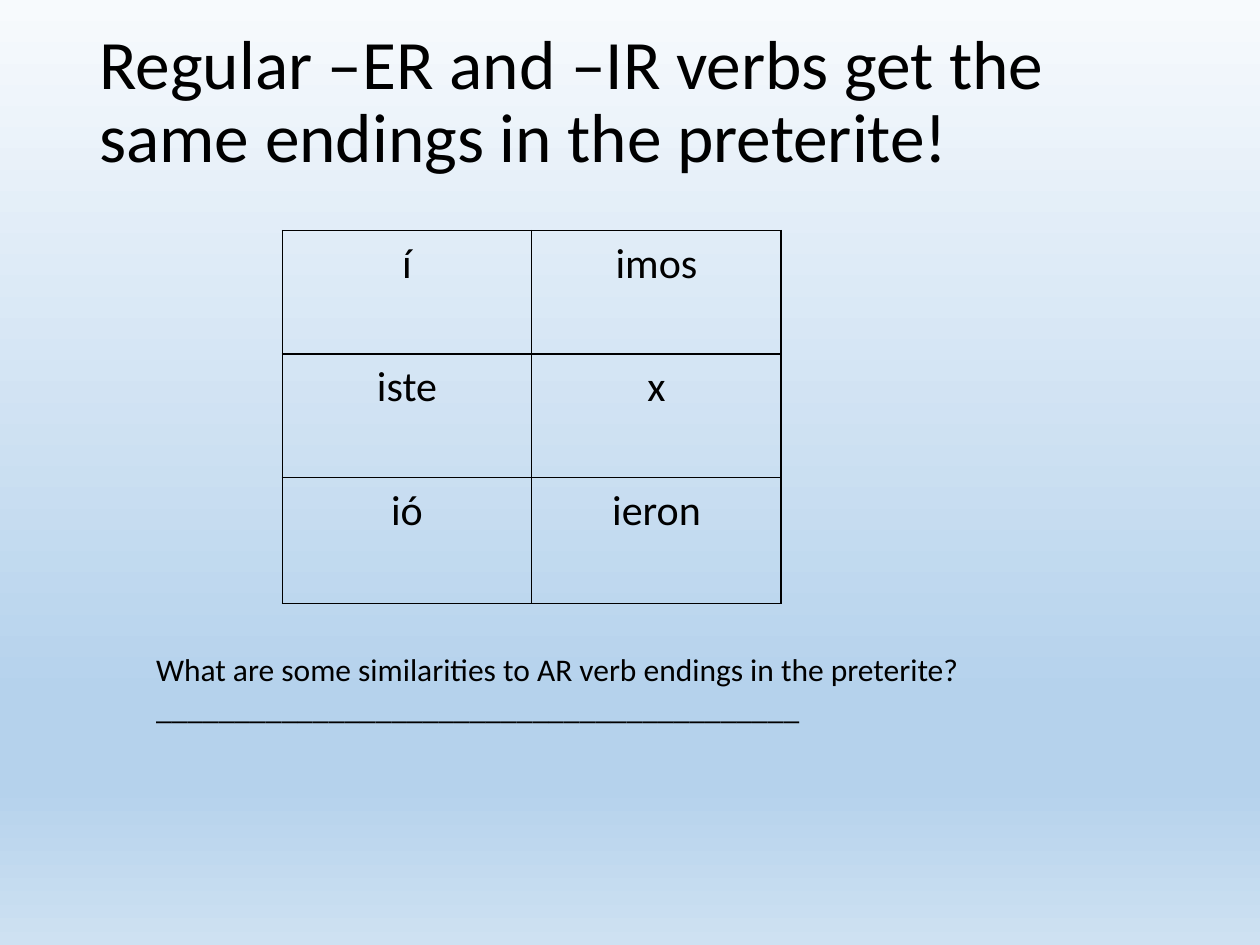
from lxml import etree
from pptx import Presentation
from pptx.dml.color import RGBColor
from pptx.enum.text import MSO_ANCHOR, MSO_AUTO_SIZE, PP_ALIGN
from pptx.oxml import parse_xml
from pptx.oxml.ns import nsdecls, qn
from pptx.util import Inches, Pt

BLACK = RGBColor(0x00, 0x00, 0x00)
PALE = RGBColor(0xF7, 0xFA, 0xFD)
SKY = RGBColor(0xB5, 0xD2, 0xEC)
MIST = RGBColor(0xCE, 0xE1, 0xF2)


def add_run(paragraph, text, size):
    run = paragraph.add_run()
    run.text = text
    run.font.name = "Calibri"
    run.font.size = Pt(size)
    run.font.color.rgb = BLACK


prs = Presentation()
prs.slide_width, prs.slide_height = Inches(10), Inches(7.5)
slide = prs.slides.add_slide(prs.slide_layouts[6])

backdrop = slide.background.fill
backdrop.gradient()
backdrop.gradient_angle = 270
stops = backdrop.gradient_stops[0]._gs.getparent()
for stop in list(stops):
    stops.remove(stop)
for percent, color in [(0, PALE), (74, SKY), (83, SKY), (100, MIST)]:
    stop = etree.SubElement(stops, qn("a:gs"), pos=str(percent * 1000))
    etree.SubElement(stop, qn("a:srgbClr"), val=str(color))

title = slide.shapes.add_textbox(Inches(0.69), Inches(0.4), Inches(8.62), Inches(1.45)).text_frame
title.word_wrap = True
title.auto_size = MSO_AUTO_SIZE.NONE
title.vertical_anchor = MSO_ANCHOR.MIDDLE
title.margin_bottom = Inches(0.65)
title.paragraphs[0].line_spacing = 0.88
add_run(title.paragraphs[0], "Regular –ER and –IR verbs get the same endings in the preterite!", 39.6)

ENDINGS = [("í", "imos"), ("iste", "x"), ("ió", "ieron")]
endings = slide.shapes.add_table(3, 2, Inches(2.24), Inches(1.83), Inches(3.97), Inches(2.96)).table
endings.first_row = False
endings.horz_banding = False
for column in endings.columns:
    column.width = Inches(1.98)
for row, height, words in zip(endings.rows, (0.98, 0.98, 1), ENDINGS):
    row.height = Inches(height)
    for cell, word in zip(row.cells, words):
        cell.margin_left = cell.margin_right = Inches(0.07)
        cell.margin_top = cell.margin_bottom = 0
        paragraph = cell.text_frame.paragraphs[0]
        paragraph.alignment = PP_ALIGN.CENTER
        paragraph.line_spacing = 1.15
        paragraph.space_after = Pt(10)
        add_run(paragraph, word, 24)
        cell.fill.background()
        borders = cell._tc.get_or_add_tcPr()
        for index, side in enumerate(("lnL", "lnR", "lnT", "lnB")):
            borders.insert(index, parse_xml(
                f'<a:{side} {nsdecls("a")} w="{Pt(1)}"><a:solidFill>'
                f'<a:srgbClr val="{BLACK}"/></a:solidFill></a:{side}>'))

question = slide.shapes.add_textbox(Inches(1.14), Inches(5.11), Inches(7.21), Inches(0.71)).text_frame
question.word_wrap = True
question.auto_size = MSO_AUTO_SIZE.SHAPE_TO_FIT_TEXT
add_run(question.paragraphs[0],
        "What are some similarities to AR verb endings in the preterite? " + "_" * 41, 18)

prs.save("out.pptx")
